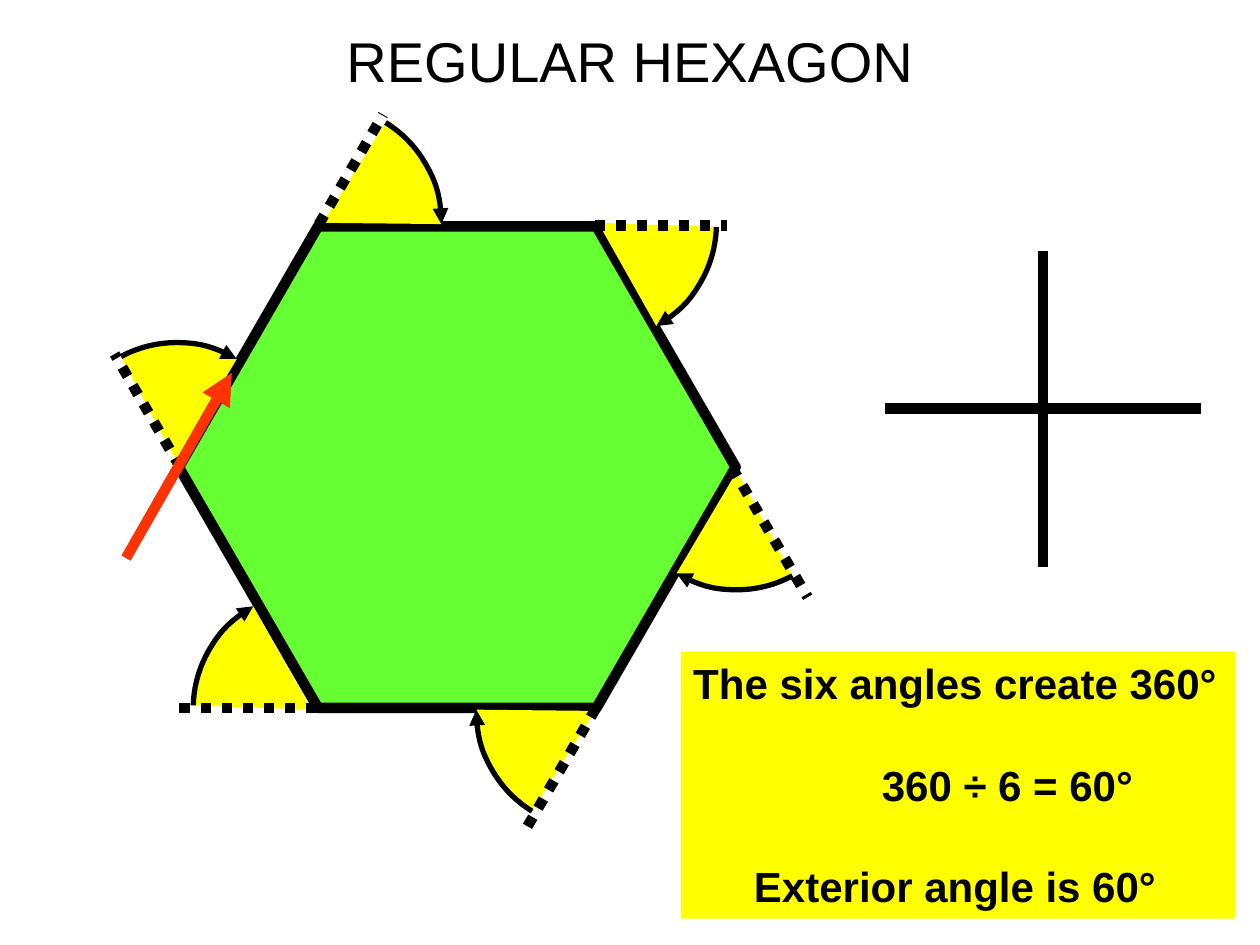
from copy import deepcopy
from dataclasses import dataclass

from lxml import etree
from pptx import Presentation
from pptx.dml.color import RGBColor
from pptx.enum import dml, shapes, text
from pptx.oxml import ns
from pptx.util import Pt


@dataclass(frozen=True)
class Theme:
    """Colours, font and sizes of the lesson."""
    ink: str = "000000"
    hexagon: str = "66FF33"
    angle: str = "FFFF00"
    pointer: str = "FF3300"
    font: str = "Arial"
    title_size: float = 32
    note_size: float = 24
    edge: float = 6
    arc: float = 3


THEME = Theme()
WEDGE_SIZE = 66.2, 67.7
WEDGE_NODES = (0, 8), (31.7, 0), (66.2, 9.4), (31.7, 67.7)
ARC_CURVES = (
    ((9.7, 2.8), (20.5, 0), (31.7, 0)),
    ((43.8, 0), (55.7, 3.2), (66.2, 9.4)),
)
WEDGE_CORNERS = ((181.4, 77.8), (337.3, 111.6), (386.6, 269.3),
                 (276.8, 388.1), (116.3, 353.5), (69.1, 195.8))
EXTENSIONS = (
    ((182.2, 128.2), (218.9, 65.5)),
    ((339.8, 128.9), (415.4, 128.9)),
    ((418.3, 267.1), (461.5, 341.3)),
    ((340.6, 404.6), (301, 473)),
    ((180.7, 404.6), (100.1, 404.6)),
    ((103, 267.1), (65.5, 202.3)),
)


def paint(shape, color):
    """Fill a shape with a plain colour and no shadow."""
    shape.shadow.inherit = False
    shape.fill.solid()
    shape.fill.fore_color.rgb = RGBColor.from_string(color)


def stroke(shape, color, width):
    """Set the outline of a shape."""
    shape.line.color.rgb = RGBColor.from_string(color)
    shape.line.width = Pt(width)


def add_arrowhead(shape, end="tailEnd"):
    """Put a triangle at one end of a line."""
    etree.SubElement(shape.get_or_add_ln(), ns.qn(f"a:{end}"), type="triangle")


def write(paragraph, words, size, bold=False, before=0, indent=0):
    """Write one centred paragraph."""
    run = paragraph.add_run()
    run.text = words
    run.font.name = THEME.font
    run.font.size = Pt(size)
    run.font.bold = bold
    run.font.color.rgb = RGBColor.from_string(THEME.ink)
    paragraph.alignment = text.PP_ALIGN.CENTER
    paragraph.space_before = Pt(before)
    if indent:
        properties = paragraph._p.get_or_add_pPr()
        properties.set("marL", str(Pt(indent)))
        properties.set("indent", "0")


def add_line(parent, start, end, color=THEME.ink, dash=None):
    """Draw a straight edge-weight line."""
    line = parent.add_connector(
        shapes.MSO_CONNECTOR.STRAIGHT, *(Pt(value) for value in (*start, *end)))
    stroke(line, color, THEME.edge)
    if dash:
        line.line.dash_style = dash
    etree.SubElement(line.element.spPr, ns.qn("a:effectLst"))
    return line


def bend(segment, curve):
    """Turn a straight path segment into a cubic curve."""
    segment.clear()
    segment.tag = ns.qn("a:cubicBezTo")
    for x, y in curve:
        etree.SubElement(segment, ns.qn("a:pt"), x=str(Pt(x)), y=str(Pt(y)))


def place_wedge(slide, left, top, width, height, rotation):
    """Place a turned sector whose arc alone is outlined."""
    start, *others = [(Pt(x), Pt(y)) for x, y in WEDGE_NODES]
    builder = slide.shapes.build_freeform(*start)
    builder.add_line_segments(others, close=True)
    wedge = builder.convert_to_shape()
    paint(wedge, THEME.angle)
    stroke(wedge, THEME.ink, THEME.arc)
    add_arrowhead(wedge)
    sector = next(wedge.element.iter(ns.qn("a:path")))
    arc = deepcopy(sector)
    for segment in arc[-2:]:
        arc.remove(segment)
    for outline in (arc, sector):
        for segment, curve in zip(outline[1:3], ARC_CURVES):
            bend(segment, curve)
    arc.set("fill", "none")
    sector.set("stroke", "0")
    sector.addprevious(arc)
    wedge.left, wedge.top, wedge.width, wedge.height = map(Pt, (left, top, width, height))
    wedge.rotation = rotation


def place_title(slide, left, top, width, height):
    """Place the heading."""
    title = slide.shapes.title
    title.left, title.top, title.width, title.height = map(Pt, (left, top, width, height))
    title.text_frame.vertical_anchor = text.MSO_ANCHOR.MIDDLE
    write(title.text_frame.paragraphs[0], "REGULAR HEXAGON", THEME.title_size)


def place_hexagon(slide, left, top, width, height):
    """Place the hexagon behind everything else."""
    hexagon = slide.shapes.add_shape(
        shapes.MSO_SHAPE.HEXAGON, Pt(left), Pt(top), Pt(width), Pt(height))
    hexagon.adjustments[0] = 0.289
    paint(hexagon, THEME.hexagon)
    stroke(hexagon, THEME.ink, THEME.edge)
    slide.shapes.title.element.addprevious(hexagon.element)


def place_angles(slide):
    """Place the six exterior angles and the extended sides."""
    for i, corner in enumerate(WEDGE_CORNERS, start=1):
        place_wedge(slide, *corner, *WEDGE_SIZE, rotation=60 * i % 360)
    for start, end in EXTENSIONS:
        add_line(slide.shapes, start, end, dash=dml.MSO_LINE.ROUND_DOT)


def place_pointer(slide, left, top, width, height):
    """Place the arrow that rises along the hexagon's side."""
    pointer = add_line(slide.shapes, (left + width, top), (left, top + height),
                       THEME.pointer)
    add_arrowhead(pointer, "headEnd")


def place_cross(slide, left, top, width, height):
    """Place the cross of two perpendicular lines."""
    cross = slide.shapes.add_group_shape().shapes
    middle_x, middle_y = left + width / 2, top + height / 2
    add_line(cross, (middle_x, top), (middle_x, top + height))
    add_line(cross, (left + width, middle_y), (left, middle_y))


def place_note(slide, left, top, width, height):
    """Place the panel that works out the exterior angle."""
    note = slide.shapes.add_shape(
        shapes.MSO_SHAPE.RECTANGLE, Pt(left), Pt(top), Pt(width), Pt(height))
    paint(note, THEME.angle)
    note.line.fill.background()
    frame = note.text_frame
    frame.word_wrap = True
    frame.margin_left, frame.margin_right = Pt(3), Pt(7)
    frame.vertical_anchor = text.MSO_ANCHOR.TOP
    write(frame.paragraphs[0], "The six angles create 360°", THEME.note_size, bold=True)
    for words, indent in (("360 ÷ 6 = 60°", 60), ("Exterior angle is 60°", 0)):
        write(frame.add_paragraph(), words, THEME.note_size, bold=True,
              before=29, indent=indent)


def main():
    """Build and save the slide."""
    deck = Presentation()
    deck.slide_width, deck.slide_height = Pt(720), Pt(540)
    slide = deck.slides.add_slide(deck.slide_layouts[5])
    place_hexagon(slide, 102.2, 129.4, 318.2, 275.2)
    place_title(slide, 36, 9.4, 648, 49.7)
    place_note(slide, 389.3, 372.4, 316.8, 152.6)
    place_angles(slide)
    place_pointer(slide, 72, 213.1, 60.5, 105.8)
    place_cross(slide, 505.6, 143.2, 180.8, 180.8)
    deck.save("out.pptx")


if __name__ == "__main__":
    main()
